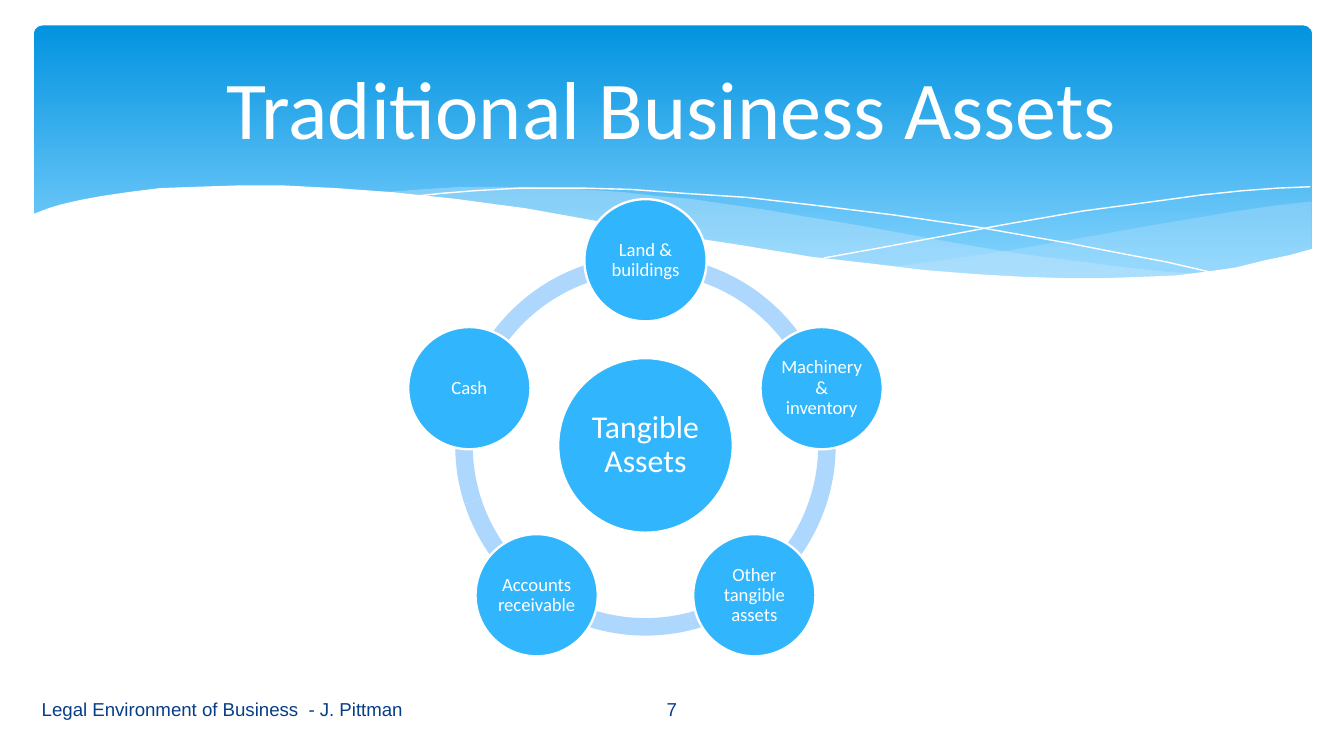
import math
import pptx
import pptx.util
import pptx.dml.color
import pptx.enum.shapes
import pptx.enum.text
import pptx.oxml

Cm, Pt = pptx.util.Cm, pptx.util.Pt
RGB = pptx.dml.color.RGBColor
Kind = pptx.enum.shapes.MSO_SHAPE
Align = pptx.enum.text.PP_ALIGN

WHITE = RGB(0xFF, 0xFF, 0xFF)
TOP = RGB(0x02, 0x93, 0xE0)
LOW = RGB(0x83, 0xD3, 0xFE)
MIST = RGB(0xC6, 0xE7, 0xFC)
RING = RGB(0xAE, 0xD7, 0xFE)
DISC = RGB(0x31, 0xB6, 0xFD)
NAVY = RGB(0x07, 0x3E, 0x87)
NS = "http://schemas.openxmlformats.org/drawingml/2006/main"

deck = pptx.Presentation()
deck.slide_width, deck.slide_height = Cm(25.4), Cm(14.29)
slide = deck.slides.add_slide(deck.slide_layouts[5])
shapes = slide.shapes


def paint(shape, color=None, edge=None, width=0):
    """Set fill and outline; None leaves either of them out."""
    shape.shadow.inherit = False
    if color is None:
        shape.fill.background()
    else:
        shape.fill.solid()
        shape.fill.fore_color.rgb = color
    if edge is None:
        shape.line.fill.background()
    else:
        shape.line.color.rgb = edge
        shape.line.width = Pt(width)


def write(shape, text, font, align, inset, space=1.0):
    """Put one centred-in-height paragraph into a shape."""
    frame = shape.text_frame
    frame.text = text
    frame.word_wrap = True
    frame.auto_size = pptx.enum.text.MSO_AUTO_SIZE.NONE
    frame.vertical_anchor = pptx.enum.text.MSO_ANCHOR.MIDDLE
    for side, gap in zip(("left", "top", "right", "bottom"), inset):
        setattr(frame, "margin_" + side, Cm(gap))
    par = frame.paragraphs[0]
    par.alignment, par.line_spacing = align, space
    run = par.runs[0]
    run.font.color.rgb = font["color"]
    for key in ("name", "size"):
        setattr(run.font, key, font[key])


# Banner with gradient
banner = shapes.add_shape(Kind.ROUNDED_RECTANGLE, Cm(0.64), Cm(0.48), Cm(24.16), Cm(5.13))
banner.adjustments[0] = 0.034
paint(banner, TOP)
banner.fill.gradient()
banner.fill.gradient_angle = 270
for stop, color, spot in zip(banner.fill.gradient_stops, (TOP, LOW), (0, 0.9)):
    stop.color.rgb, stop.position = color, spot

# Waves: points on a grid of 2.54 cm, fill, opacity in percent, edge
right = [(9.75, 1.5), (9.48, 1.53), (9.21, 1.57), (8.91, 1.62), (8.61, 1.67), (8.05, 1.77),
         (7.53, 1.86), (7.06, 1.93), (6.61, 1.99), (6.91, 2.02), (7.18, 2.04), (7.45, 2.06),
         (7.81, 2.08), (8.14, 2.08), (8.54, 2.07), (8.81, 2.05), (9.05, 2.02), (9.28, 1.98),
         (9.49, 1.93), (9.63, 1.89), (9.76, 1.85), (9.76, 1.5)]
band = [(8.93, 2.04), (8.66, 2.02), (8.37, 1.99), (8.07, 1.95), (7.75, 1.91), (7.41, 1.86),
        (7.06, 1.8), (6.68, 1.73), (6.29, 1.66), (5.98, 1.61), (5.69, 1.56), (5.41, 1.52),
        (5.14, 1.48), (4.89, 1.46), (4.64, 1.43), (4.2, 1.4), (3.8, 1.39), (3.44, 1.39),
        (3.13, 1.41), (2.86, 1.43), (3.23, 1.47), (3.62, 1.52), (4.04, 1.58), (4.49, 1.66),
        (4.91, 1.74), (5.3, 1.8), (5.66, 1.86), (6.01, 1.91), (6.34, 1.96), (6.65, 2),
        (6.95, 2.03), (7.22, 2.05), (7.61, 2.08), (7.96, 2.09), (8.28, 2.09), (8.57, 2.08),
        (8.76, 2.06)]
fall = [(3.09, 1.46), (3.28, 1.44), (3.53, 1.42), (3.87, 1.4), (4.33, 1.4), (4.69, 1.41),
        (5.1, 1.44), (5.56, 1.47), (6.08, 1.53), (6.65, 1.6), (7.27, 1.69), (7.95, 1.81),
        (8.31, 1.88), (8.68, 1.95), (9.07, 2.04)]
rise = [(6.13, 1.92), (6.52, 1.85), (6.95, 1.77), (7.48, 1.67), (8.06, 1.57), (8.36, 1.53),
        (8.66, 1.49), (8.95, 1.45), (9.24, 1.42), (9.51, 1.4), (9.75, 1.39)]
front = [(9.77, 1.85), (9.59, 1.9), (9.4, 1.94), (9.2, 1.99), (8.99, 2.02), (8.75, 2.05),
         (8.5, 2.06), (8.23, 2.07), (7.93, 2.07), (7.61, 2.06), (7.26, 2.04), (6.88, 2.01),
         (6.47, 1.96), (6.03, 1.91), (5.55, 1.83), (5.03, 1.75), (4.47, 1.65), (3.91, 1.55),
         (3.39, 1.48), (2.92, 1.43), (2.5, 1.4), (2.11, 1.38), (1.77, 1.38), (1.46, 1.39),
         (1.19, 1.4), (0.95, 1.43), (0.75, 1.46), (0.59, 1.49), (0.46, 1.52), (0.36, 1.55),
         (0.23, 1.6), (0.23, 2.47), (9.77, 2.47)]
waves = [(right, MIST, 29, None), (band, MIST, 40, None), (fall, None, 100, WHITE),
         (rise, None, 100, WHITE), (front, WHITE, 100, None)]
for points, color, clear, edge in waves:
    spots = [(Cm(2.54 * x), Cm(2.54 * y)) for x, y in points]
    pen = shapes.build_freeform(*spots[0])
    pen.add_line_segments(spots[1:], close=edge is None)
    wave = pen.convert_to_shape()
    paint(wave, color, edge)
    if clear < 100:
        tint = wave.fill._xPr.find(f".//{{{NS}}}srgbClr")
        tint.append(pptx.oxml.parse_xml(f'<a:alpha xmlns:a="{NS}" val="{clear * 1000}"/>'))

# Ring of arcs behind the discs
MIDX, MIDY, WIDE = 12.2, 8.42, 7.19
ends = [32.4 + 43.2 * i for i in range(5)]
for i, start in enumerate(ends):
    arc = shapes.add_shape(Kind.BLOCK_ARC, Cm(MIDX - WIDE / 2), Cm(MIDY - WIDE / 2),
                           Cm(WIDE), Cm(WIDE))
    for k, value in enumerate((start * 0.6, ends[(i + 1) % 5] * 0.6, 0.046)):
        arc.adjustments[k] = value
    paint(arc, RING)

# Hub, then five discs clockwise from the top
names = ["Land & buildings", "Machinery & inventory", "Other tangible assets",
         "Accounts receivable", "Cash"]
discs = [("Tangible Assets", MIDX, MIDY, 3.3, 17, 0.05)]
for i, name in enumerate(names):
    turn = math.radians(72 * i)
    discs.append((name, MIDX + 3.5 * math.sin(turn), MIDY - 3.5 * math.cos(turn), 2.31, 10, 0.03))
for name, x, y, size, points, gap in discs:
    disc = shapes.add_shape(Kind.OVAL, Cm(x - size / 2), Cm(y - size / 2), Cm(size), Cm(size))
    paint(disc, DISC, WHITE, 1.25)
    font = {"name": "Calibri", "size": Pt(points), "color": WHITE}
    write(disc, name, font, Align.CENTER, [gap] * 4, 0.9)

# Footer and page number
small = {"name": "Arial", "size": Pt(10), "color": NAVY}
pad = (0.25, 0.13, 0.25, 0.13)
for text, x, width, align in [
    ("Legal Environment of Business  - J. Pittman", 0.54, 10.52, Align.LEFT),
    ("7", 11.08, 3.23, Align.CENTER),
]:
    box = shapes.add_textbox(Cm(x), Cm(13.03), Cm(width), Cm(0.76))
    write(box, text, small, align, pad)

# Title, brought in front of the banner
title = shapes.title
place = {"left": Cm(1.27), "top": Cm(0.71), "width": Cm(22.86), "height": Cm(2.62)}
for key, value in place.items():
    setattr(title, key, value)
large = {"name": "Calibri", "size": Pt(44), "color": WHITE}
write(title, "Traditional Business Assets", large, Align.CENTER, pad)
shapes._spTree.append(title._element)

deck.save("out.pptx")
